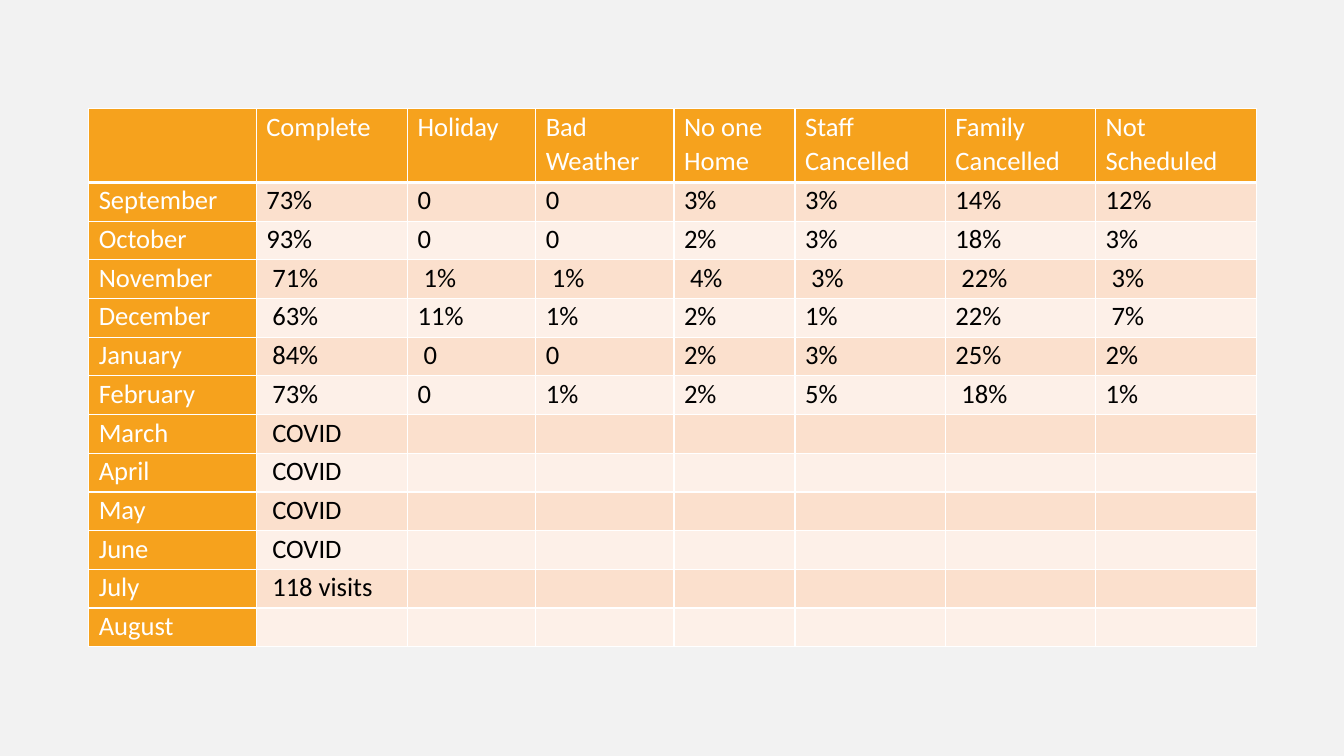
from lxml.etree import SubElement
from pptx import Presentation
from pptx.dml.color import RGBColor
from pptx.oxml.ns import qn
from pptx.util import Inches, Pt

BACKGROUND = RGBColor(0xF2, 0xF2, 0xF2)
ORANGE = RGBColor(0xF6, 0xA2, 0x1D)
PEACH = RGBColor(0xFB, 0xE0, 0xCD)
CREAM = RGBColor(0xFD, 0xF0, 0xE8)
WHITE = RGBColor(0xFF, 0xFF, 0xFF)
BLACK = RGBColor(0x00, 0x00, 0x00)

VISITS = [
    ["", "Complete", "Holiday", "Bad Weather", "No one Home",
     "Staff Cancelled", "Family Cancelled", "Not Scheduled"],
    ["September", "73%", "0", "0", "3%", "3%", "14%", "12%"],
    ["October", "93%", "0", "0", "2%", "3%", "18%", "3%"],
    ["November", " 71%", " 1%", " 1%", " 4%", " 3%", " 22%", " 3%"],
    ["December", " 63%", "11%", "1%", "2%", "1%", "22%", " 7%"],
    ["January", " 84%", " 0", "0", "2%", "3%", "25%", "2%"],
    ["February", " 73%", "0", "1%", "2%", "5%", " 18%", "1%"],
    ["March", " COVID"],
    ["April", " COVID"],
    ["May", " COVID"],
    ["June", " COVID"],
    ["July", " 118 visits"],
    ["August"],
]
COLUMN_WIDTHS = [1.66, 1.5, 1.27, 1.37, 1.2, 1.49, 1.49, 1.59]
HEADER_HEIGHT = 0.73


def add_borders(cell, bottom_width):
    """Draw white 1 pt borders, with a bottom border of its own width."""
    properties = cell._tc.get_or_add_tcPr()
    widths = {"a:lnL": 1, "a:lnR": 1, "a:lnT": 1, "a:lnB": bottom_width}
    for side, width in widths.items():
        line = SubElement(properties, qn(side), w=str(Pt(width)))
        fill = SubElement(line, qn("a:solidFill"))
        SubElement(fill, qn("a:srgbClr"), val=str(WHITE))


def format_cell(cell, text, fill, text_color, bottom_width):
    add_borders(cell, bottom_width)
    cell.fill.solid()
    cell.fill.fore_color.rgb = fill
    cell.margin_left = cell.margin_right = Inches(0.1)
    cell.margin_top = cell.margin_bottom = 0
    cell.text = text
    paragraph = cell.text_frame.paragraphs[0]
    paragraph.line_spacing = 1.07
    font = paragraph.font
    font.name, font.size, font.bold = "Calibri", Pt(19), False
    font.color.rgb = text_color


def add_visit_table(slide, left, top, width, height):
    frame = slide.shapes.add_table(
        len(VISITS), len(COLUMN_WIDTHS),
        Inches(left), Inches(top), Inches(width), Inches(height))
    table = frame.table
    for column, share in zip(table.columns, COLUMN_WIDTHS):
        column.width = Inches(width * share / sum(COLUMN_WIDTHS))
    month_height = (height - HEADER_HEIGHT) / (len(VISITS) - 1)
    for row_index, (row, texts) in enumerate(zip(table.rows, VISITS)):
        is_header = row_index == 0
        row.height = Inches(HEADER_HEIGHT if is_header else month_height)
        band = PEACH if row_index % 2 else CREAM
        for column_index, cell in enumerate(row.cells):
            is_label = is_header or column_index == 0
            text = texts[column_index] if column_index < len(texts) else ""
            format_cell(cell, text,
                        fill=ORANGE if is_label else band,
                        text_color=WHITE if is_label else BLACK,
                        bottom_width=3 if is_header else 1)


def main():
    presentation = Presentation()
    presentation.slide_width = Inches(13.33)
    presentation.slide_height = Inches(7.5)
    slide = presentation.slides.add_slide(presentation.slide_layouts[6])
    slide.background.fill.solid()
    slide.background.fill.fore_color.rgb = BACKGROUND
    add_visit_table(slide, 0.88, 1.08, 11.58, 5.34)
    presentation.save("out.pptx")


if __name__ == "__main__":
    main()
